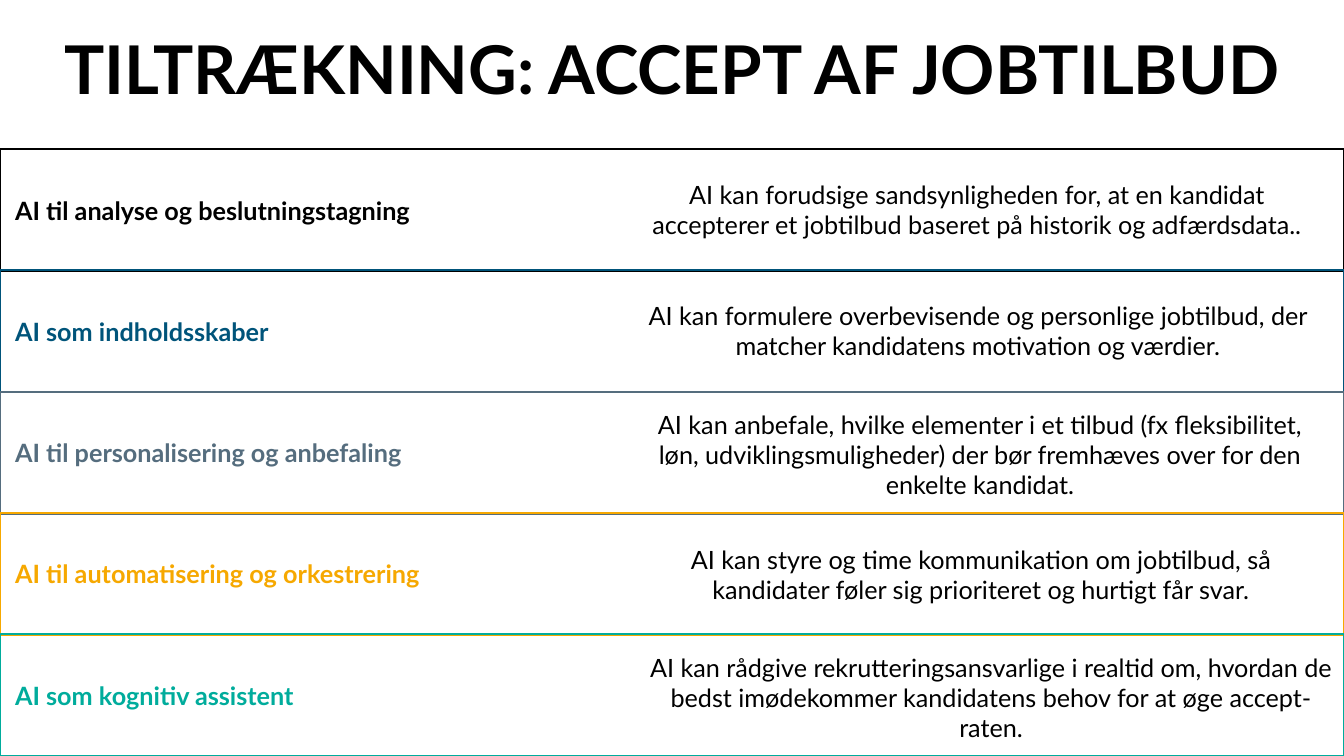
from dataclasses import dataclass

from pptx import Presentation
from pptx.dml.color import RGBColor as Rgb
from pptx.enum.shapes import MSO_SHAPE as Kind
from pptx.enum.text import MSO_ANCHOR as Anchor, PP_ALIGN as Align
from pptx.shapes.autoshape import Shape
from pptx.shapes.shapetree import SlideShapes as Shapes
from pptx.util import Inches, Pt


@dataclass(frozen=True)
class Theme:
    font: str = "Lato"
    black: str = "000000"
    blue: str = "00547A"
    slate: str = "556D7E"
    amber: str = "F6A800"
    teal: str = "00AC9C"
    title: int = 48
    body: int = 18
    line: float = 1.5


@dataclass(frozen=True)
class Row:
    label: str
    color: str
    note: str
    left: float
    top: float


THEME = Theme()
WIDE, HIGH = 13.33, 7.5
ROW_TOP, ROW_HIGH = 1.48, 1.21
NOTE_WIDE, NOTE_HIGH = 7, 1.2

ROWS = [
    Row("AI til analyse og beslutningstagning", THEME.black,
        "AI kan forudsige sandsynligheden for, at en kandidat accepterer "
        "et jobtilbud baseret på historik og adfærdsdata..", 6.19, 1.48),
    Row("AI som indholdsskaber", THEME.blue,
        "AI kan formulere overbevisende og personlige jobtilbud, der "
        "matcher kandidatens motivation og værdier.", 6.2, 2.68),
    Row("AI til personalisering og anbefaling", THEME.slate,
        "AI kan anbefale, hvilke elementer i et tilbud (fx fleksibilitet, "
        "løn, udviklingsmuligheder) der bør fremhæves over for den "
        "enkelte kandidat.", 6.22, 3.91),
    Row("AI til automatisering og orkestrering", THEME.amber,
        "AI kan styre og time kommunikation om jobtilbud, så kandidater "
        "føler sig prioriteret og hurtigt får svar.", 6.23, 5.1),
    Row("AI som kognitiv assistent", THEME.teal,
        "AI kan rådgive rekrutteringsansvarlige i realtid om, hvordan de "
        "bedst imødekommer kandidatens behov for at øge accept-raten.",
        6.33, 6.32),
]


def write(shape: Shape, text: str, *, size: int = THEME.body,
          color: str = THEME.black, bold: bool = False,
          align: Align = Align.CENTER, inset: float = 0.1) -> None:
    frame = shape.text_frame
    frame.word_wrap = True
    frame.vertical_anchor = Anchor.MIDDLE
    frame.margin_left = Inches(inset)
    para = frame.paragraphs[0]
    para.alignment = align
    run = para.add_run()
    run.text = text
    font = run.font
    font.name, font.size, font.bold = THEME.font, Pt(size), bold
    font.color.rgb = Rgb.from_string(color)


def add_box(shapes: Shapes, left: float, top: float,
            wide: float, high: float) -> Shape:
    return shapes.add_textbox(*map(Inches, (left, top, wide, high)))


def add_band(shapes: Shapes, row: Row, top: float) -> None:
    """Draw the outlined, full-width frame of a row with its label."""
    band = shapes.add_shape(
        Kind.RECTANGLE, *map(Inches, (0, top, WIDE, ROW_HIGH)))
    band.shadow.inherit = False
    band.fill.background()
    band.line.color.rgb = Rgb.from_string(row.color)
    band.line.width = Pt(THEME.line)
    write(band, row.label, color=row.color, bold=True,
          align=Align.LEFT, inset=0.15)


def main() -> None:
    deck = Presentation()
    deck.slide_width, deck.slide_height = Inches(WIDE), Inches(HIGH)
    shapes = deck.slides.add_slide(deck.slide_layouts[6]).shapes

    pitch = (HIGH - ROW_TOP - ROW_HIGH) / (len(ROWS) - 1)
    for i, row in enumerate(ROWS):
        add_band(shapes, row, ROW_TOP + i * pitch)

    write(add_box(shapes, 0, 0, WIDE, 1.34),
          "TILTRÆKNING: ACCEPT AF JOBTILBUD", size=THEME.title, bold=True)
    for row in ROWS:
        write(add_box(shapes, row.left, row.top, NOTE_WIDE, NOTE_HIGH),
              row.note)

    deck.save("out.pptx")


if __name__ == "__main__":
    main()
